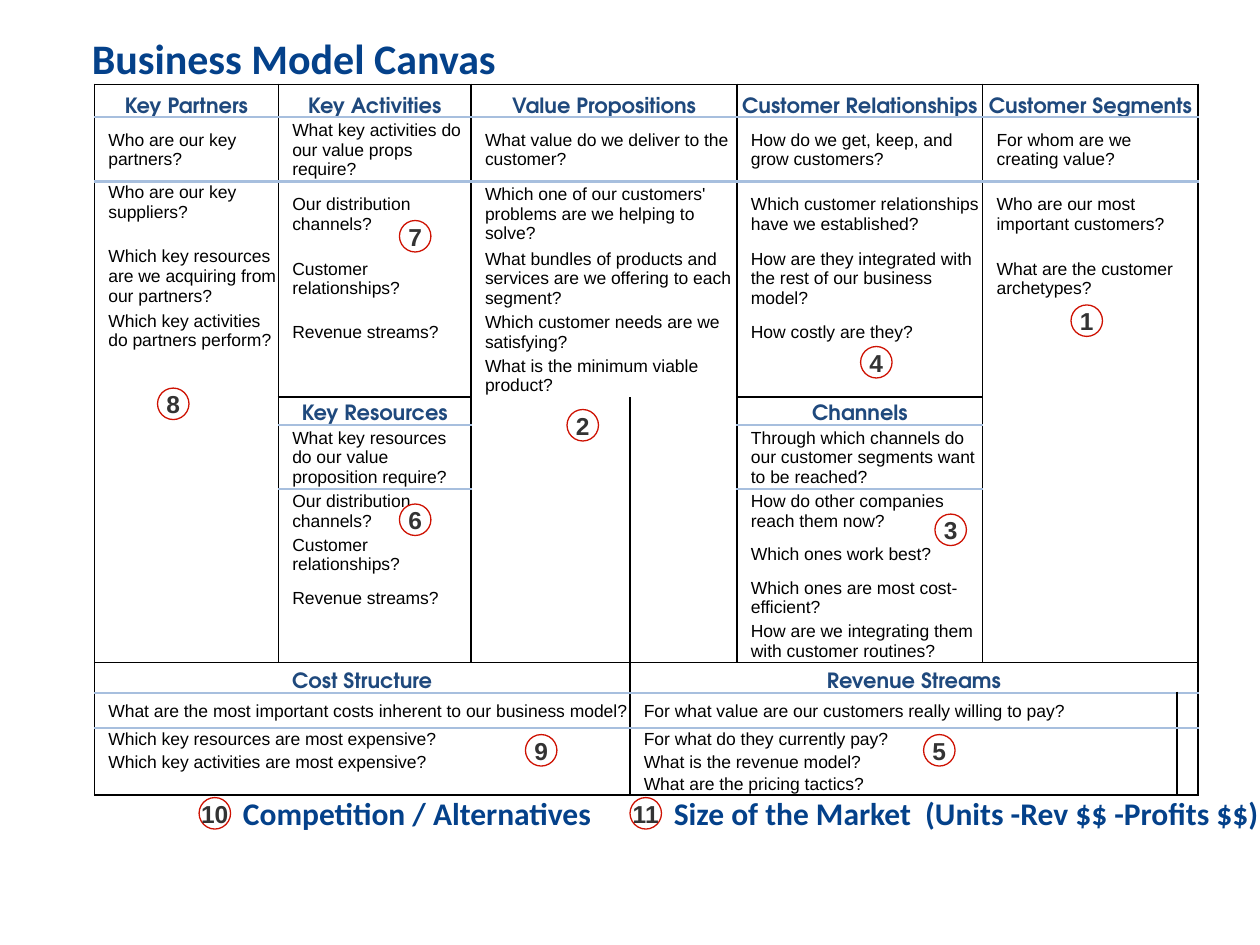
from lxml import etree
from pptx import Presentation
from pptx import util as u
from pptx.dml.color import RGBColor
from pptx.enum import shapes, text
from pptx.oxml.ns import qn

NAVY, BLACK, RULE = "04418A", "000000", "A7BFDE"


def rgb(value):
    return RGBColor.from_string(value)


def write(tf, content, size=10, font="Arial", color=BLACK, bold=False, align="LEFT",
          anchor="MIDDLE", spacing=None, wrap=True):
    tf.word_wrap = wrap
    tf.vertical_anchor = getattr(text.MSO_ANCHOR, anchor)
    p = tf.paragraphs[0]
    p.alignment = getattr(text.PP_ALIGN, align)
    if spacing:
        p.line_spacing = u.Pt(spacing)
    r = p.add_run()
    r.text = content
    r.font.size, r.font.name, r.font.bold = u.Pt(size), font, bold
    r.font.color.rgb = rgb(color)


prs = Presentation()
prs.slide_width, prs.slide_height = u.Inches(10), u.Inches(7.5)
s = prs.slides.add_slide(prs.slide_layouts[6])

title = s.shapes.add_textbox(u.Inches(0.63), u.Inches(0.17), u.Inches(8.58), u.Inches(0.58))
write(title.text_frame, "Business Model Canvas", size=24, font="Calibri", color=NAVY,
      bold=True, spacing=28)

widths = [1.46, 1.53, 1.26, 0.85, 1.95, 1.54, 0.17]
heights = ([0.26] + [0.49] * 3 + [0.33] + [0.16] * 2 + [0.22, 0.49] + [0.33] * 4
           + [0.24, 0.28] + [0.17] * 3)
frame = s.shapes.add_table(len(heights), len(widths), u.Inches(0.75), u.Inches(0.67),
                           u.Inches(sum(widths)), u.Inches(sum(heights)))
table = frame.table
table.first_row = table.horz_banding = False
style_id = table._tbl.tblPr.find(qn("a:tableStyleId"))
style_id.text = "{2D5ABB26-0587-4C30-8999-92F81FD0307C}"
for col, width in zip(table.columns, widths):
    col.width = u.Inches(width)
for row, height in zip(table.rows, heights):
    row.height = u.Inches(height)

merges = [(row, 2, row, 3) for row in range(5)] + [(5, 2, 6, 3)]
merges += [(row, 5, row, 6) for row in range(13)]
merges += [(13, 0, 13, 2), (14, 0, 14, 2), (15, 0, 15, 1), (16, 0, 16, 1), (13, 3, 13, 6)]
merges += [(row, 3, row, 5) for row in range(14, 18)]
for top, left, bottom, right in merges:
    table.cell(top, left).merge(table.cell(bottom, right))

blocks = [
    (0, 0, 12, 0, "Key Partners", [
        "Who are our key partners?",
        "Who are our key suppliers?",
        "Which key resources are we acquiring from our partners?",
        "Which key activities do partners perform?"]),
    (0, 1, 6, 1, "Key Activities", [
        "What key activities do our value props require?",
        "Our distribution channels?",
        "Customer relationships?",
        "Revenue streams?"]),
    (0, 2, 12, 3, "Value Propositions", [
        "What value do we deliver to the customer?",
        "Which one of our customers' problems are we helping to solve?",
        "What bundles of products and services are we offering to each segment?",
        "Which customer needs are we satisfying?",
        "What is the minimum viable product?"]),
    (0, 4, 6, 4, "Customer Relationships", [
        "How do we get, keep, and grow customers?",
        "Which customer relationships have we established?",
        "How are they integrated with the rest of our business model?",
        "How costly are they?"]),
    (0, 5, 12, 6, "Customer Segments", [
        "For whom are we creating value?",
        "Who are our most important customers?",
        "What are the customer archetypes?"]),
    (7, 1, 12, 1, "Key Resources", [
        "What key resources do our value proposition require?",
        "Our distribution channels?",
        "Customer relationships?",
        "Revenue streams?"]),
    (7, 4, 12, 4, "Channels", [
        "Through which channels do our customer segments want to be reached?",
        "How do other companies reach them now?",
        "Which ones work best?",
        "Which ones are most cost-efficient?",
        "How are we integrating them with customer routines?"]),
    (13, 0, 17, 2, "Cost Structure", [
        "What are the most important costs inherent to our business model?",
        "Which key resources are most expensive?",
        "Which key activities are most expensive?"]),
    (13, 3, 17, 6, "Revenue Streams", [
        "For what value are our customers really willing to pay?",
        "For what do they currently pay?",
        "What is the revenue model?",
        "What are the pricing tactics?"]),
]
for top, left, bottom, right, heading, questions in blocks:
    lines = [heading] + questions
    for row in range(top, bottom + 1):
        for col in range(left, right + 1):
            cell = table.cell(row, col)
            cell.fill.background()
            is_head = row == top
            cell.margin_left = u.Inches(0.01 if is_head else 0.11)
            cell.margin_right = cell.margin_top = u.Inches(0.01)
            cell.margin_bottom = 0
            if col == left and row - top < len(lines):
                line = lines[row - top]
                if is_head:
                    cell.vertical_anchor = text.MSO_ANCHOR.BOTTOM
                    write(cell.text_frame, line, size=12, font="TeX Gyre Adventor",
                          color="1F497D", bold=True, align="CENTER", anchor="BOTTOM")
                else:
                    upper = left == 0 and 2 <= row <= 4
                    anchor = "TOP" if upper else "MIDDLE"
                    cell.vertical_anchor = getattr(text.MSO_ANCHOR, anchor)
                    write(cell.text_frame, line, anchor=anchor)
            else:
                p = cell.text_frame.paragraphs[0]
                etree.SubElement(p._p, qn("a:endParaRPr"), sz="800")

            edges = []
            if col == left:
                edges.append(("a:lnL", BLACK, 1))
            if col + cell.span_width - 1 == right:
                edges.append(("a:lnR", BLACK, 1))
            if row == top:
                edges.append(("a:lnT", BLACK, 1))
            elif row == top + 1:
                edges.append(("a:lnT", RULE, 1.5))
            if row == top:
                edges.append(("a:lnB", RULE, 1.5))
            elif row + cell.span_height - 1 == bottom:
                edges.append(("a:lnB", BLACK, 1))
            tc_pr = cell._tc.get_or_add_tcPr()
            for i, (tag, color, points) in enumerate(edges):
                ln = etree.Element(qn(tag), w=str(u.Pt(points)))
                fill = etree.SubElement(ln, qn("a:solidFill"))
                etree.SubElement(fill, qn("a:srgbClr"), val=color)
                tc_pr.insert(i, ln)

badges = [(1, 8.5, 2.42), (8, 1.25, 3.08), (7, 3.17, 1.75), (6, 3.17, 4), (9, 4.17, 5.83),
          (5, 7.33, 5.83), (2, 4.5, 3.25), (3, 7.42, 4.08), (4, 6.83, 2.75), (11, 5, 6.33),
          (10, 1.58, 6.33)]
for number, x, y in badges:
    sp = s.shapes.add_shape(shapes.MSO_SHAPE.OVAL, u.Inches(x), u.Inches(y),
                            u.Inches(0.25), u.Inches(0.25))
    sp.shadow.inherit = False
    sp.fill.solid()
    sp.fill.fore_color.rgb = rgb("FFFFFF")
    sp.line.color.rgb = rgb("CE1102")
    sp.line.width = u.Pt(0.75)
    tf = sp.text_frame
    tf.margin_left = tf.margin_right = tf.margin_top = tf.margin_bottom = 0
    write(tf, str(number), size=14, color="333333", bold=True, align="CENTER", wrap=False)

for x, width, label in [(1.83, 3.05, "Competition / Alternatives"),
                        (5.25, 5.06, "Size of the Market  (Units -Rev $$ -Profits $$)")]:
    sp = s.shapes.add_textbox(u.Inches(x), u.Inches(6.25), u.Inches(width), u.Inches(0.4))
    write(sp.text_frame, label, size=18, font="Calibri", color=NAVY, bold=True,
          anchor="TOP", wrap=False)

prs.save("out.pptx")
